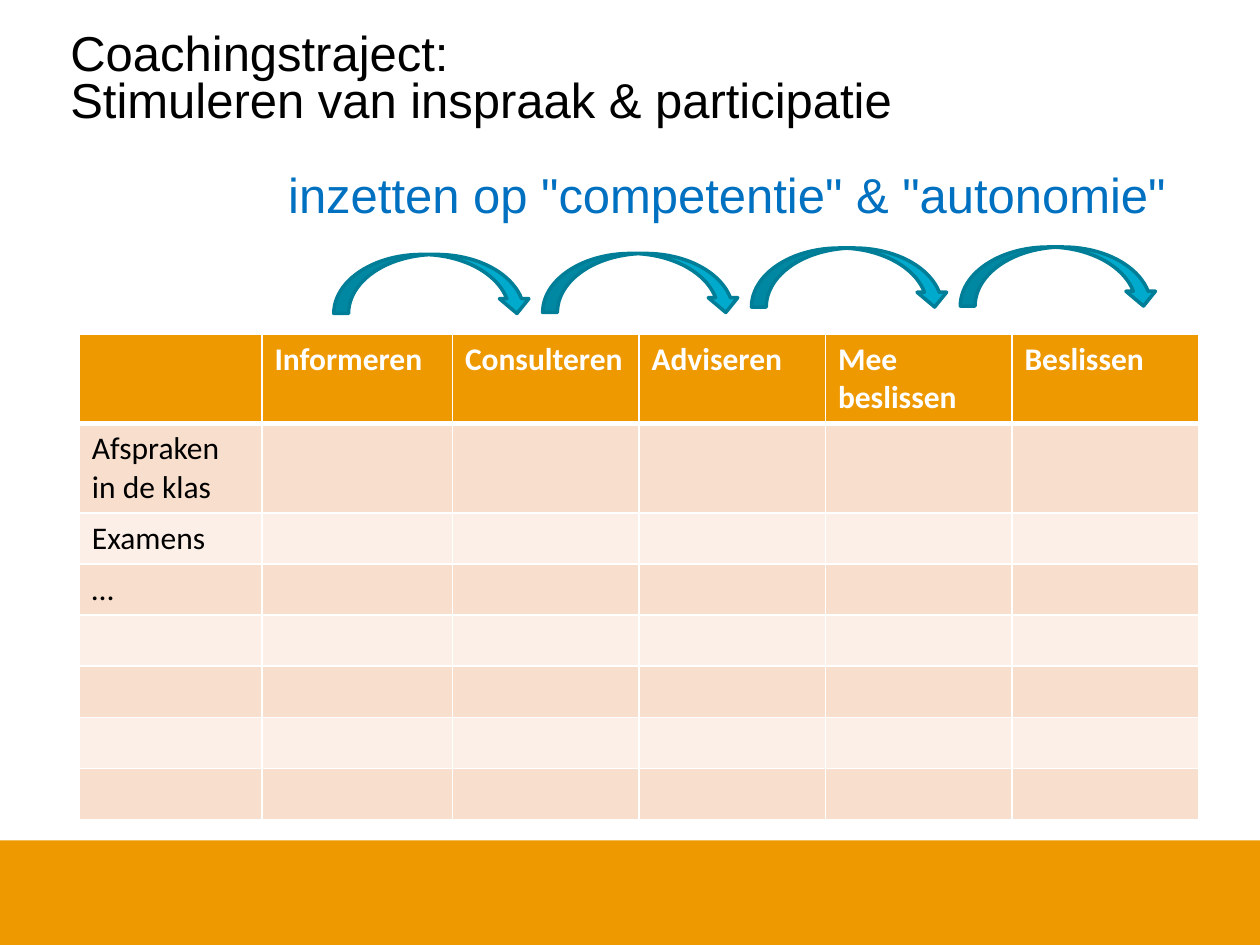
from dataclasses import dataclass

from lxml.etree import SubElement
from pptx import Presentation
from pptx.dml.color import RGBColor as Rgb
from pptx.enum.shapes import MSO_SHAPE as Shape
from pptx.enum.text import MSO_ANCHOR as Anchor
from pptx.oxml.ns import qn
from pptx.util import Cm, Pt


@dataclass(frozen=True)
class Theme:
    orange: str = "EE9900"
    band_dark: str = "F8DECC"
    band_light: str = "FCEFE7"
    arrow: str = "00AACC"
    arrow_line: str = "007E97"
    accent: str = "0070C0"
    black: str = "000000"
    white: str = "FFFFFF"
    title_font: str = "Arial"
    table_font: str = "Calibri"
    title_size: int = 28
    table_size: int = 18


THEME = Theme()

HEADERS = ["", "Informeren", "Consulteren", "Adviseren", "Mee beslissen", "Beslissen"]
TOPICS = ["Afspraken in de klas", "Examens", "…", "", "", "", ""]
COLUMN_WIDTHS = [3.68, 3.84] + [3.76] * 4
ROW_HEIGHTS = [1.76, 1.77] + [1.02] * 6
ARROW_TOPS = [5.13, 5.11, 5.0, 4.98]


def add_run(paragraph, text, font_name, size, color, bold=False):
    run = paragraph.add_run()
    run.text = text
    run.font.name = font_name
    run.font.size = Pt(size)
    run.font.bold = bold
    run.font.color.rgb = Rgb.from_string(color)


def add_preset(slide, kind, left, top, width, height, fill, line=None):
    shape = slide.shapes.add_shape(kind, Cm(left), Cm(top), Cm(width), Cm(height))
    shape.shadow.inherit = False
    shape.fill.solid()
    shape.fill.fore_color.rgb = Rgb.from_string(fill)
    if line:
        shape.line.color.rgb = Rgb.from_string(line)
        shape.line.width = Pt(2)
    else:
        shape.line.fill.background()


def add_title(slide):
    box = slide.shapes.add_textbox(Cm(1.17), Cm(0.56), Cm(22.89), Cm(4.1))
    frame = box.text_frame
    frame.word_wrap = True
    frame.vertical_anchor = Anchor.TOP
    # text, colour, space before (pt), left indent (cm)
    lines = [
        ("Coachingstraject:", THEME.black, 0, 0),
        ("Stimuleren van inspraak & participatie", THEME.black, 0, 0),
        ('inzetten op "competentie" & "autonomie"', THEME.accent, 27, 4.39),
    ]
    for index, (text, color, space, indent) in enumerate(lines):
        paragraph = frame.add_paragraph() if index else frame.paragraphs[0]
        paragraph.line_spacing = 0.8
        paragraph.space_before = Pt(space)
        if indent:
            paragraph._p.get_or_add_pPr().set("marL", str(Cm(indent)))
        add_run(paragraph, text, THEME.title_font, THEME.title_size, color)


def set_borders(cell, widths):
    properties = cell._tc.get_or_add_tcPr()
    for side, width in widths.items():
        line = SubElement(properties, qn(f"a:ln{side}"), w=str(Pt(width)))
        fill = SubElement(line, qn("a:solidFill"))
        SubElement(fill, qn("a:srgbClr"), val=THEME.white)


def add_participation_table(slide):
    rows = [HEADERS] + [[topic] + [""] * (len(HEADERS) - 1) for topic in TOPICS]
    frame = slide.shapes.add_table(
        len(rows), len(HEADERS), Cm(1.6), Cm(6.73),
        Cm(sum(COLUMN_WIDTHS)), Cm(sum(ROW_HEIGHTS)),
    )
    table = frame.table
    for column, width in zip(table.columns, COLUMN_WIDTHS):
        column.width = Cm(width)
    for row, height in zip(table.rows, ROW_HEIGHTS):
        row.height = Cm(height)

    for row_index, texts in enumerate(rows):
        is_header = row_index == 0
        band = THEME.band_dark if row_index % 2 else THEME.band_light
        # The rule under the header is thicker than the others
        borders = {"L": 1, "R": 1, "T": 3 if row_index == 1 else 1,
                   "B": 3 if is_header else 1}
        for column_index, text in enumerate(texts):
            cell = table.cell(row_index, column_index)
            set_borders(cell, borders)
            cell.fill.solid()
            cell.fill.fore_color.rgb = Rgb.from_string(THEME.orange if is_header else band)
            paragraph = cell.text_frame.paragraphs[0]
            if text:
                add_run(paragraph, text, THEME.table_font, THEME.table_size,
                        THEME.white if is_header else THEME.black, is_header)
            else:
                paragraph.font.size = Pt(THEME.table_size)
                paragraph.font.name = THEME.table_font


def main():
    presentation = Presentation()
    presentation.slide_width = Cm(25.4)
    presentation.slide_height = Cm(19.05)
    slide = presentation.slides.add_slide(presentation.slide_layouts[6])

    # Footer band
    add_preset(slide, Shape.RECTANGLE, 0, 16.94, 25.4, 2.11, THEME.orange)

    # Table and heading
    add_participation_table(slide)
    add_title(slide)

    # Arrows from each level of participation to the next
    for index, top in enumerate(ARROW_TOPS):
        add_preset(slide, Shape.CURVED_DOWN_ARROW, 6.73 + 4.21 * index, top,
                   3.99, 1.19, THEME.arrow, THEME.arrow_line)

    presentation.save("out.pptx")


if __name__ == "__main__":
    main()
